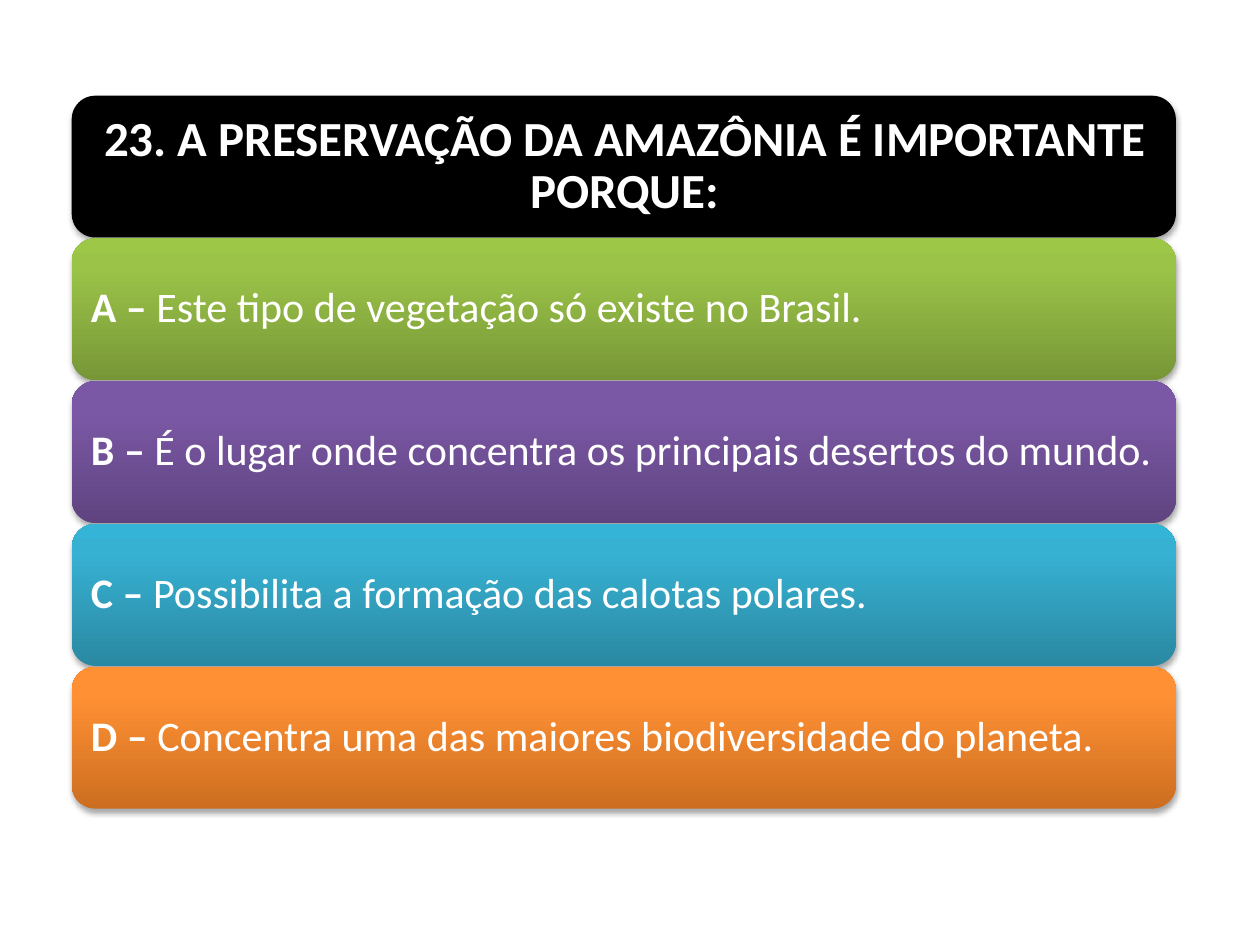
from lxml.etree import SubElement
from pptx import Presentation
from pptx.dml.color import RGBColor
from pptx.enum.shapes import MSO_SHAPE
from pptx.enum.text import MSO_ANCHOR, MSO_AUTO_SIZE, PP_ALIGN
from pptx.oxml import parse_xml
from pptx.oxml.ns import nsdecls, qn
from pptx.util import Pt

LEFT, TOP, WIDTH, HEIGHT = 41, 54.7, 631, 81
PITCH = 81.6
INSET = 4  # room taken by the rounded corners

QUESTION = "23. A PRESERVAÇÃO DA AMAZÔNIA É IMPORTANTE PORQUE:"
# Letter, answer, gradient colours from bottom to top
ANSWERS = [
    ("A", "Este tipo de vegetação só existe no Brasil.",
     ("779737", "9BC348", "9DC746")),
    ("B", "É o lugar onde concentra os principais desertos do mundo.",
     ("5F4480", "7B58A6", "7C57A8")),
    ("C", "Possibilita a formação das calotas polares.",
     ("2A88A2", "37B1D2", "34B4D6")),
    ("D", "Concentra uma das maiores biodiversidade do planeta.",
     ("CC6E20", "FF9034", "FF9136")),
]


def color(hex_string):
    return RGBColor.from_string(hex_string)


def write(shape, *parts, size, align, margin):
    """Fill a shape with one paragraph of (text, bold) parts."""
    frame = shape.text_frame
    frame.word_wrap = True
    frame.auto_size = MSO_AUTO_SIZE.NONE
    frame.vertical_anchor = MSO_ANCHOR.MIDDLE
    frame.margin_left = frame.margin_top = frame.margin_bottom = Pt(margin)
    frame.margin_right = Pt(margin - 1)
    paragraph = frame.paragraphs[0]
    paragraph.alignment = align
    paragraph.line_spacing = 0.9
    for text, bold in parts:
        run = paragraph.add_run()
        run.text = text
        run.font.name = "Calibri"
        run.font.size = Pt(size)
        run.font.bold = bold
        run.font.color.rgb = color("FFFFFF")


presentation = Presentation()
presentation.slide_width, presentation.slide_height = Pt(720), Pt(540)
slide = presentation.slides.add_slide(presentation.slide_layouts[5])
title = slide.shapes.title

# Five stacked bars with a soft shadow
bars = []
for row in range(len(ANSWERS) + 1):
    bar = slide.shapes.add_shape(
        MSO_SHAPE.ROUNDED_RECTANGLE,
        Pt(LEFT), Pt(TOP + row * PITCH), Pt(WIDTH), Pt(HEIGHT))
    bar.line.fill.background()
    bar.shadow.inherit = False
    effects = bar.element.spPr.find(qn("a:effectLst"))
    shadow = SubElement(effects, qn("a:outerShdw"), blurRad=str(Pt(3.1)),
                        dist=str(Pt(1.8)), dir="5400000", rotWithShape="0")
    black = SubElement(shadow, qn("a:srgbClr"), val="000000")
    SubElement(black, qn("a:alpha"), val="35000")
    bars.append(bar)

# Question: the title lies on the black bar
bars[0].fill.solid()
bars[0].fill.fore_color.rgb = color("000000")
bars[0].element.addnext(title.element)
title.left, title.top = Pt(LEFT + INSET), Pt(TOP + INSET)
title.width, title.height = Pt(WIDTH - 2 * INSET), Pt(HEIGHT - 2 * INSET)
write(title, (QUESTION, True), size=28, align=PP_ALIGN.CENTER, margin=8.4)

# Answers: gradient bars
for bar, (letter, answer, shades) in zip(bars[1:], ANSWERS):
    stops = "".join(
        f'<a:gs pos="{position}"><a:srgbClr val="{shade}"/></a:gs>'
        for position, shade in zip((0, 80000, 100000), shades))
    gradient = parse_xml(
        f'<a:gradFill {nsdecls("a")} rotWithShape="1"><a:gsLst>{stops}</a:gsLst>'
        '<a:lin ang="16200000" scaled="0"/></a:gradFill>')
    bar.element.spPr.find(qn("a:prstGeom")).addnext(gradient)
    write(bar, (f"{letter} – ", True), (answer, False),
          size=24, align=PP_ALIGN.JUSTIFY, margin=7.2)

presentation.save("out.pptx")
